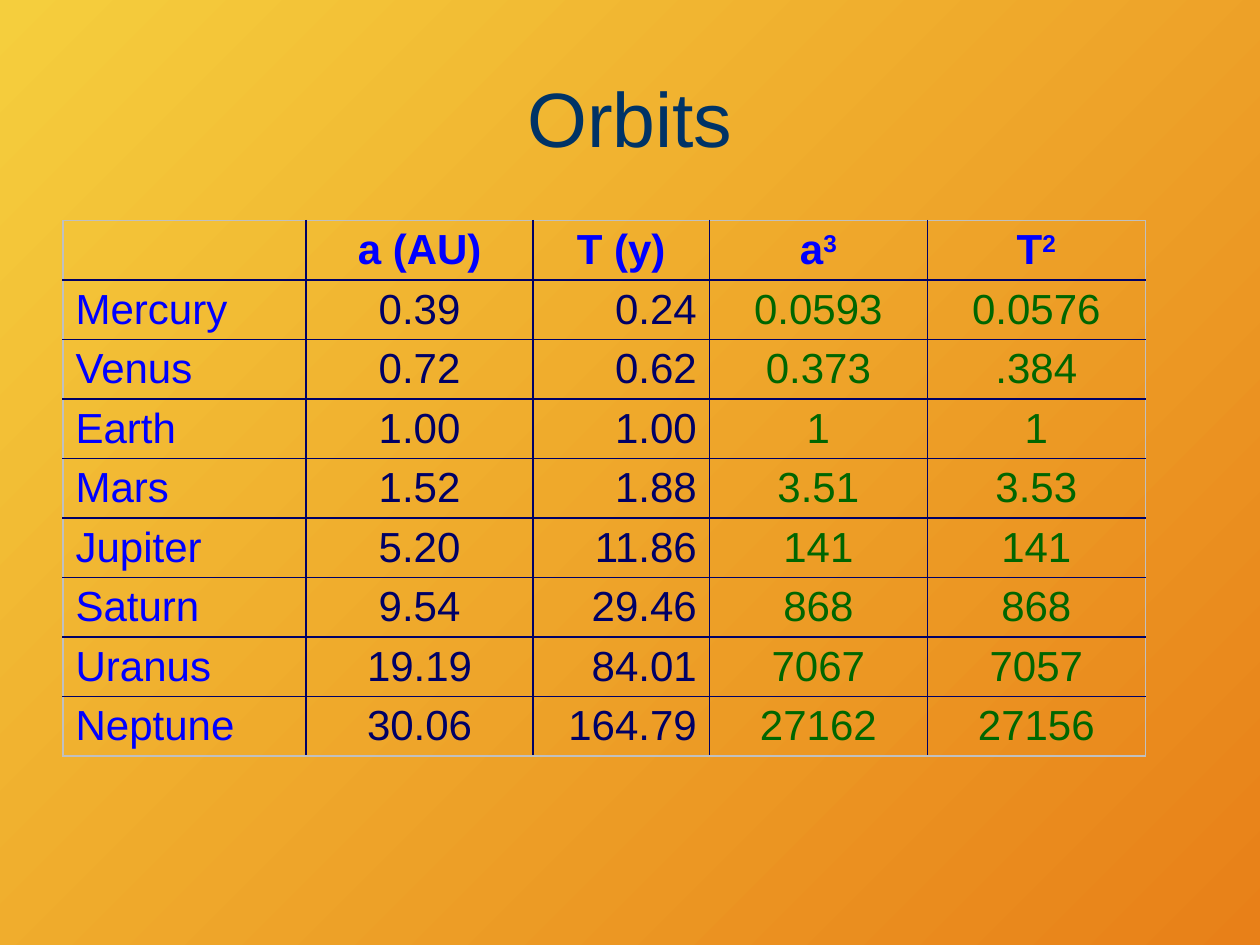
"""Build a slide with a table of planetary orbits."""
from dataclasses import dataclass

from pptx import Presentation
from pptx import util as u
from pptx.dml.color import RGBColor
from pptx.enum import text
from pptx.oxml import parse_xml
from pptx.oxml.ns import nsdecls

COLORS = {
    "sun": "F5CE3D", "ember": "E88018", "title": "003366", "label": "0000FF",
    "measured": "000066", "computed": "006600", "grid": "000066", "frame": "C0C0C0",
}
FONT = "Arial"
WIDTH, HEIGHT = u.Inches(10), u.Inches(7.5)
LEFT, TOP = u.Inches(0.5), u.Inches(1.75)
TABLE_HEIGHT = u.Inches(4.25)


@dataclass(frozen=True)
class Column:
    heading: str
    power: str
    width: float
    color: str
    align: text.PP_ALIGN


COLUMNS = [
    Column("", "", 1.93, "label", text.PP_ALIGN.LEFT),
    Column("a (AU)", "", 1.8, "measured", text.PP_ALIGN.CENTER),
    Column("T (y)", "", 1.4, "measured", text.PP_ALIGN.RIGHT),
    Column("a", "3", 1.73, "computed", text.PP_ALIGN.CENTER),
    Column("T", "2", 1.73, "computed", text.PP_ALIGN.CENTER),
]
PLANETS = [
    ("Mercury", "0.39", "0.24", "0.0593", "0.0576"),
    ("Venus", "0.72", "0.62", "0.373", ".384"),
    ("Earth", "1.00", "1.00", "1", "1"),
    ("Mars", "1.52", "1.88", "3.51", "3.53"),
    ("Jupiter", "5.20", "11.86", "141", "141"),
    ("Saturn", "9.54", "29.46", "868", "868"),
    ("Uranus", "19.19", "84.01", "7067", "7057"),
    ("Neptune", "30.06", "164.79", "27162", "27156"),
]


def write(paragraph, words: str, *, color: str, size: float = 24, bold: bool = False,
          align: text.PP_ALIGN = text.PP_ALIGN.CENTER, power: str = "") -> None:
    """Write words, with an optional superscript power, into a paragraph."""
    paragraph.alignment = align
    for part in filter(None, (words, power)):
        run = paragraph.add_run()
        run.text = part
        run.font.name, run.font.size, run.font.bold = FONT, u.Pt(size), bold
        run.font.color.rgb = RGBColor.from_string(COLORS[color])
    if power:
        run._r.get_or_add_rPr().set("baseline", "30000")


def draw_borders(cell, row: int, column: int) -> None:
    """Rule a cell with grid lines inside the table and frame lines around it."""
    outer = {"L": column == 0, "R": column == len(COLUMNS) - 1,
             "T": row == 0, "B": row == len(PLANETS)}
    for side, is_outer in outer.items():
        color = COLORS["frame" if is_outer else "grid"]
        cell._tc.get_or_add_tcPr().append(parse_xml(
            f'<a:ln{side} {nsdecls("a")} w="{u.Pt(1)}"><a:solidFill>'
            f'<a:srgbClr val="{color}"/></a:solidFill></a:ln{side}>'))


def draw_table(slide) -> None:
    """Draw the orbit table with its headings and planets."""
    row_count = len(PLANETS) + 1
    table_width = u.Inches(sum(column.width for column in COLUMNS))
    table = slide.shapes.add_table(
        row_count, len(COLUMNS), LEFT, TOP, table_width, TABLE_HEIGHT).table
    table.first_row = table.horz_banding = False
    for row in table.rows:
        row.height = TABLE_HEIGHT // row_count
    for index, column in enumerate(COLUMNS):
        table.columns[index].width = u.Inches(column.width)
        for row in range(row_count):
            cell = table.cell(row, index)
            draw_borders(cell, row, index)
            cell.fill.background()
            cell.margin_top, cell.margin_bottom = u.Inches(0.05), u.Inches(0.03)
            paragraph = cell.text_frame.paragraphs[0]
            if row == 0:
                write(paragraph, column.heading, color="label", bold=True,
                      power=column.power)
            else:
                write(paragraph, PLANETS[row - 1][index], color=column.color,
                      align=column.align)


def draw_background(slide) -> None:
    """Fill the slide with a diagonal gradient."""
    fill = slide.background.fill
    fill.gradient()
    fill.gradient_angle = 315
    for stop, name in zip(fill.gradient_stops, ("sun", "ember")):
        stop.color.rgb = RGBColor.from_string(COLORS[name])


def draw_title(slide) -> None:
    """Place and format the title."""
    title = slide.shapes.title
    title.left, title.top = LEFT, int(HEIGHT * 0.04)
    title.width, title.height = WIDTH - 2 * LEFT, u.Inches(1.25)
    title.text_frame.vertical_anchor = text.MSO_ANCHOR.MIDDLE
    write(title.text_frame.paragraphs[0], "Orbits", color="title", size=44)


def main() -> None:
    """Build and save the presentation."""
    presentation = Presentation()
    presentation.slide_width, presentation.slide_height = WIDTH, HEIGHT
    slide = presentation.slides.add_slide(presentation.slide_layouts[5])
    draw_background(slide)
    draw_title(slide)
    draw_table(slide)
    presentation.save("out.pptx")


if __name__ == "__main__":
    main()
